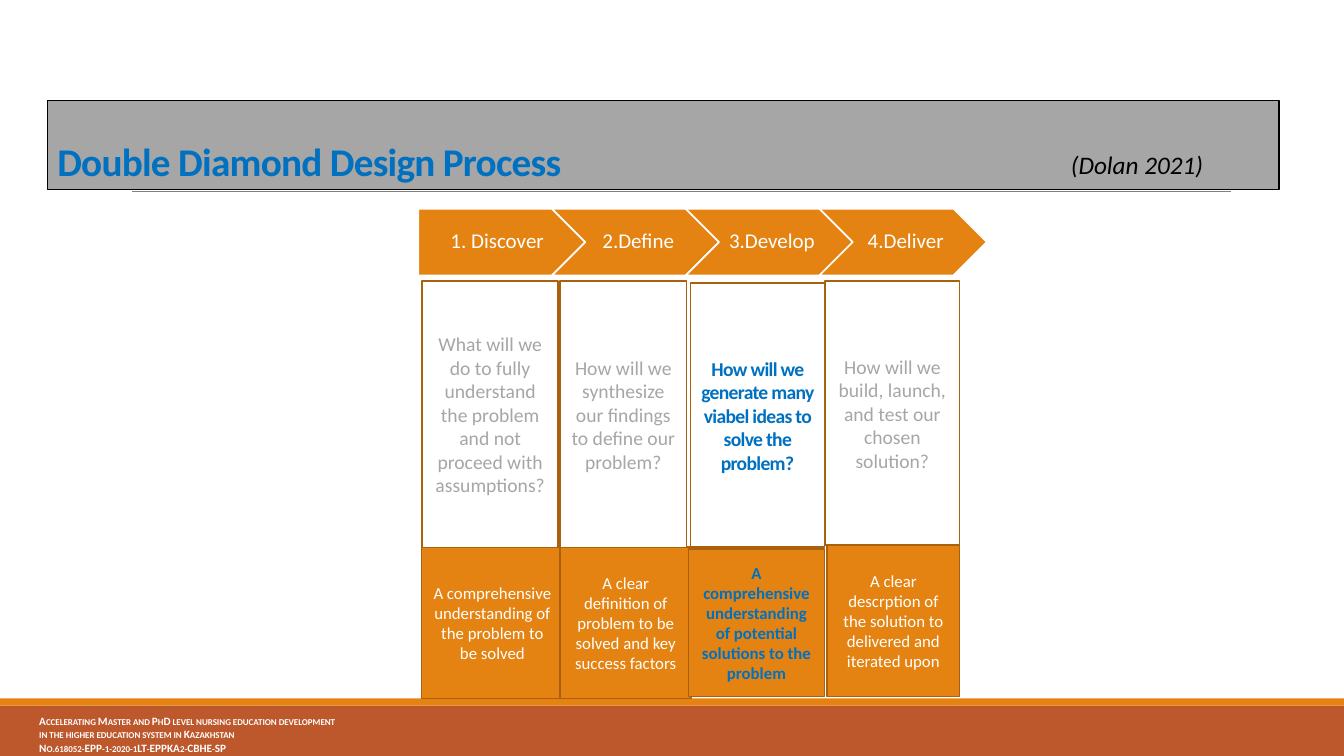
from pptx import Presentation
from pptx.dml.color import RGBColor
from pptx.enum.shapes import MSO_CONNECTOR, MSO_SHAPE as Shape
from pptx.enum.text import MSO_ANCHOR as Anchor, MSO_AUTO_SIZE as AutoSize, PP_ALIGN as Align
from pptx.oxml.ns import qn
from pptx.util import Cm, Pt
from lxml.etree import SubElement

COLORS = {
    "white": "FFFFFF", "black": "000000", "orange": "E48312", "brown": "A9610D",
    "rust": "BD582C", "gray": "A6A6A6", "rule": "808080", "blue": "0070C0",
}
STAGES = ["1. Discover", "2.Define", "3.Develop", "4.Deliver"]
CURRENT_STAGE = 2
QUESTIONS = [
    ("What will we do to fully understand the problem and not proceed with assumptions?",
     (0.1, 0, 3.43, 6.71)),
    ("How will we synthesize our findings to define our problem?", (3.58, 0, 3.18, 6.71)),
    ("How will we generate many viabel ideas to solve the problem?", (6.86, 0.05, 3.38, 6.65)),
    ("How will we build, launch, and test our chosen solution?", (10.26, 0, 3.38, 6.65)),
]
OUTCOMES = [
    ("A comprehensive understanding of the problem to be solved", (0.08, 0.05, 3.58, 3.81)),
    ("A clear definition of problem to be solved and key success factors",
     (3.58, 0.05, 3.3, 3.81)),
    ("A comprehensive understanding of potential solutions to the problem",
     (6.81, 0.1, 3.43, 3.71)),
    ("A clear descrption of the solution to delivered and iterated upon",
     (10.31, 0, 3.33, 3.81)),
]
FOOTER = [
    "Accelerating Master and PhD level nursing education development",
    "in the higher education system in Kazakhstan",
    "No.618052-EPP-1-2020-1LT-EPPKA2-CBHE-SP",
]


def color(name):
    """Return the named palette colour."""
    return RGBColor.from_string(COLORS[name])


def place(left, top, width, height):
    """Convert a box in centimetres to lengths."""
    return Cm(left), Cm(top), Cm(width), Cm(height)


def format_runs(frame, size, ink, bold=False, italic=False, align=Align.LEFT, **extras):
    """Format every run of a frame, with extra run attributes."""
    for paragraph in frame.paragraphs:
        paragraph.alignment = align
        for run in paragraph.runs:
            font = run.font
            font.name, font.size, font.bold, font.italic = "Calibri", Pt(size), bold, italic
            font.color.rgb = color(ink)
            for key, value in extras.items():
                run._r.get_or_add_rPr().set(key, value)


def add_block(slide, kind, box, fill, outline=None):
    """Add a filled shape with an optional outline."""
    block = slide.shapes.add_shape(kind, *place(*box))
    block.shadow.inherit = False
    block.fill.solid()
    block.fill.fore_color.rgb = color(fill)
    if outline:
        block.line.color.rgb = color(outline)
        block.line.width = Pt(1.25)
    else:
        block.line.fill.background()
    return block


def add_label(slide, box, text, size, ink, **style):
    """Add a wrapped text box."""
    frame = slide.shapes.add_textbox(*place(*box)).text_frame
    frame.word_wrap = True
    frame.text = text
    format_runs(frame, size, ink, **style)


def add_footer(slide, box):
    """Draw the footer band with its strip and project name."""
    left, top, width, height = box
    add_block(slide, Shape.RECTANGLE, box, "rust")
    add_block(slide, Shape.RECTANGLE, (left, top - 0.18, width, 0.18), "orange")
    add_label(slide, (left + 0.74, top + 0.09, 11.66, height - 0.09), "\n".join(FOOTER),
              8, "white", bold=True, cap="small")


def add_header(slide, box):
    """Fill the title bar, with its citation and the rule beneath."""
    left, top, width, height = box
    rule_y = Cm(top + height + 0.05)
    rule = slide.shapes.add_connector(
        MSO_CONNECTOR.STRAIGHT, Cm(left + 2.14), rule_y, Cm(left + 29.82), rule_y)
    rule.line.color.rgb = color("rule")
    rule.line.width = Pt(0.5)
    SubElement(rule._element.spPr, qn("a:effectLst"))

    title = slide.shapes.title
    title.left, title.top, title.width, title.height = place(*box)
    title.fill.solid()
    title.fill.fore_color.rgb = color("gray")
    title.line.color.rgb = color("black")
    title.line.width = Pt(1)
    frame = title.text_frame
    frame.text = "Double Diamond Design Process"
    frame.word_wrap = True
    frame.auto_size = AutoSize.NONE
    frame.vertical_anchor = Anchor.BOTTOM
    frame.paragraphs[0].line_spacing = 0.85
    format_runs(frame, 28, "blue", bold=True, spc="-50")
    add_label(slide, (left + 25.55, top + 1.09, 5.5, 1.02), "(Dolan 2021)",
              18, "black", italic=True)


def add_stages(slide, box):
    """Draw the row of stage arrows."""
    left, top, width, height = box
    arrow_width = 4.22
    step = (width - arrow_width) / (len(STAGES) - 1)
    for index, stage in enumerate(STAGES):
        kind = Shape.CHEVRON if index else Shape.PENTAGON
        arrow = add_block(slide, kind, (left + index * step, top, arrow_width, height),
                          "orange", "white")
        frame = arrow.text_frame
        frame.margin_left = Cm(0.18 if index else 0.23)
        frame.margin_right = Cm(0.05)
        frame.margin_top = frame.margin_bottom = Cm(0.1)
        frame.vertical_anchor = Anchor.MIDDLE
        frame.text = stage
        frame.paragraphs[0].line_spacing = 0.9
        format_runs(frame, 15, "white", align=Align.CENTER)


def add_cards(slide, box, cards, fill, ink, size, **current_extras):
    """Draw a row of cards, with the current stage highlighted."""
    left, top = box[:2]
    for index, (text, (dx, dy, width, height)) in enumerate(cards):
        card = add_block(slide, Shape.RECTANGLE, (left + dx, top + dy, width, height),
                         fill, "brown")
        frame = card.text_frame
        frame.word_wrap = True
        frame.vertical_anchor = Anchor.MIDDLE
        frame.text = text
        current = index == CURRENT_STAGE
        format_runs(frame, size, "blue" if current else ink, bold=current,
                    align=Align.CENTER, **(current_extras if current else {}))


def main():
    """Build and save the slide."""
    deck = Presentation()
    deck.slide_width, deck.slide_height = Cm(33.87), Cm(19.05)
    slide = deck.slides.add_slide(deck.slide_layouts[5])
    add_footer(slide, (0, 17.78, 33.87, 1.27))
    add_header(slide, (1.19, 2.54, 31.04, 2.24))
    add_stages(slide, (10.54, 5.26, 14.33, 1.68))
    add_cards(slide, (10.54, 13.74, 13.64, 3.86), OUTCOMES, "orange", "white", 12)
    add_cards(slide, (10.54, 7.09, 13.64, 6.71), QUESTIONS, "white", "gray", 14, spc="-50")
    deck.save("out.pptx")


if __name__ == "__main__":
    main()
